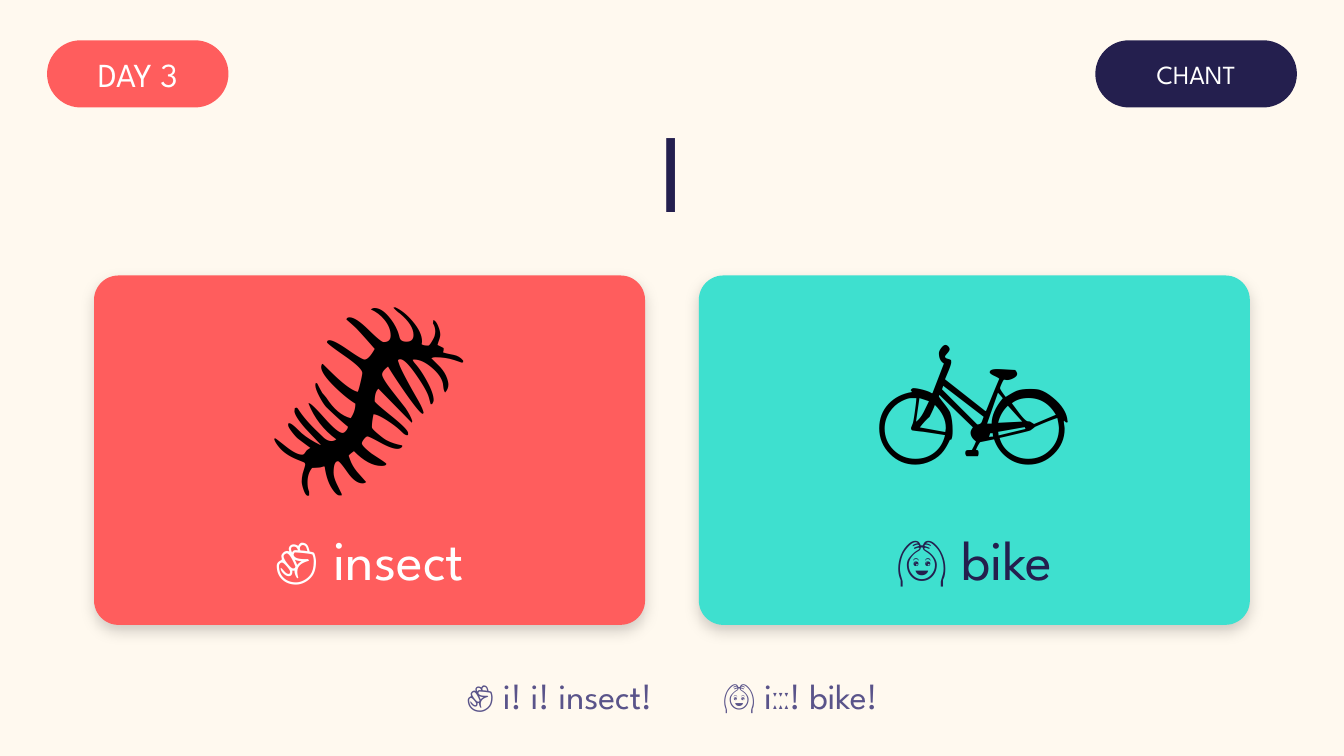
from lxml import etree
from pptx import Presentation
from pptx.dml.color import RGBColor
from pptx.enum.shapes import MSO_SHAPE
from pptx.enum.text import MSO_ANCHOR, PP_ALIGN
from pptx.oxml.ns import qn
from pptx.util import Inches, Pt

ROUND = MSO_SHAPE.ROUNDED_RECTANGLE
TOP, MIDDLE = MSO_ANCHOR.TOP, MSO_ANCHOR.MIDDLE
CENTER = PP_ALIGN.CENTER
FONT = "League Spartan"
CORAL, TEAL, NAVY = "FF5D5D", "3EE0CF", "241F4E"
WHITE, BLACK, CREAM, MAUVE = "FFFFFF", "000000", "FFF9EF", "5A548A"


def color(code):
    """Turn a hex string into a colour."""
    return RGBColor.from_string(code)


def panel(slide, box, fill, round_by):
    """Draw a flat rounded panel."""
    shape = slide.shapes.add_shape(ROUND, *map(Inches, box))
    shape.adjustments[0] = round_by
    shape.fill.solid()
    shape.fill.fore_color.rgb = color(fill)
    shape.line.fill.background()
    shape.shadow.inherit = False
    return shape


def write(para, text, size, ink, font=FONT):
    """Add one styled run to a paragraph."""
    run = para.add_run()
    run.text = text
    run.font.size = Pt(size)
    run.font.name = font
    run.font.color.rgb = color(ink)
    return run


def frame(slide, box, anchor=MIDDLE):
    """Add a wrapping text box with a centred paragraph."""
    area = slide.shapes.add_textbox(*map(Inches, box)).text_frame
    area.word_wrap = True
    area.vertical_anchor = anchor
    area.paragraphs[0].alignment = CENTER
    return area


def label(slide, box, text, size, ink, anchor=MIDDLE, font=FONT):
    """Write one line of text in a box."""
    area = frame(slide, box, anchor)
    write(area.paragraphs[0], text, size, ink, font)
    return area


def shade(shape):
    """Give a shape a soft shadow below it."""
    effects = shape._element.spPr.find(qn("a:effectLst"))
    outer = etree.SubElement(effects, qn("a:outerShdw"), blurRad=str(Pt(8)),
                             dist=str(Pt(3)), dir="5400000", rotWithShape="0")
    tint = etree.SubElement(outer, qn("a:srgbClr"), val=BLACK)
    etree.SubElement(tint, qn("a:alpha"), val="18000")


def pill(slide, box, text, size, fill):
    """Draw a pill with a centred label."""
    panel(slide, box, fill, 0.5)
    area = label(slide, box, text, size, WHITE)
    area.margin_left = area.margin_right = 0
    area.margin_top = area.margin_bottom = 0


def card(slide, box, icon, word, fill, ink):
    """Draw a word card with a large icon."""
    left, top, width, height = box
    shade(panel(slide, box, fill, 0.07))
    label(slide, (left, top - 0.2, width, 1.7), icon, 110, BLACK, TOP,
          "Calibri")
    label(slide, (left, top + height - 0.8, width, 0.6), word, 30, ink)


def chant(slide, box, first, second):
    """Write two chant lines with one widely spaced gap."""
    para = frame(slide, box).paragraphs[0]
    write(para, first, 19, MAUVE)
    gap = write(para, " ", 19, MAUVE)
    gap.font._element.set("spc", "3300")
    write(para, second, 19, MAUVE)


def main():
    """Build the slide and save it."""
    deck = Presentation()
    deck.slide_width, deck.slide_height = Inches(10), Inches(10 * 9 / 16)
    slide = deck.slides.add_slide(deck.slide_layouts[6])
    back = slide.background.fill
    back.solid()
    back.fore_color.rgb = color(CREAM)
    pill(slide, (0.35, 0.3, 1.35, 0.5), "DAY 3", 18, CORAL)
    pill(slide, (8.15, 0.3, 1.5, 0.5), "CHANT", 14, NAVY)
    label(slide, (0, 0.8, 10, 0.9), "I", 60, NAVY)
    cards = [("🐛", "✊ insect", CORAL, WHITE), ("🚲", "🙆 bike", TEAL, NAVY)]
    for num, parts in enumerate(cards):
        card(slide, (0.7 + 4.5 * num, 2.05, 4.1, 2.6), *parts)
    chant(slide, (0, 4.95, 10, 0.45), "✊ i! i! insect!", "🙆 iːːː! bike!")
    deck.save("out.pptx")


if __name__ == "__main__":
    main()
